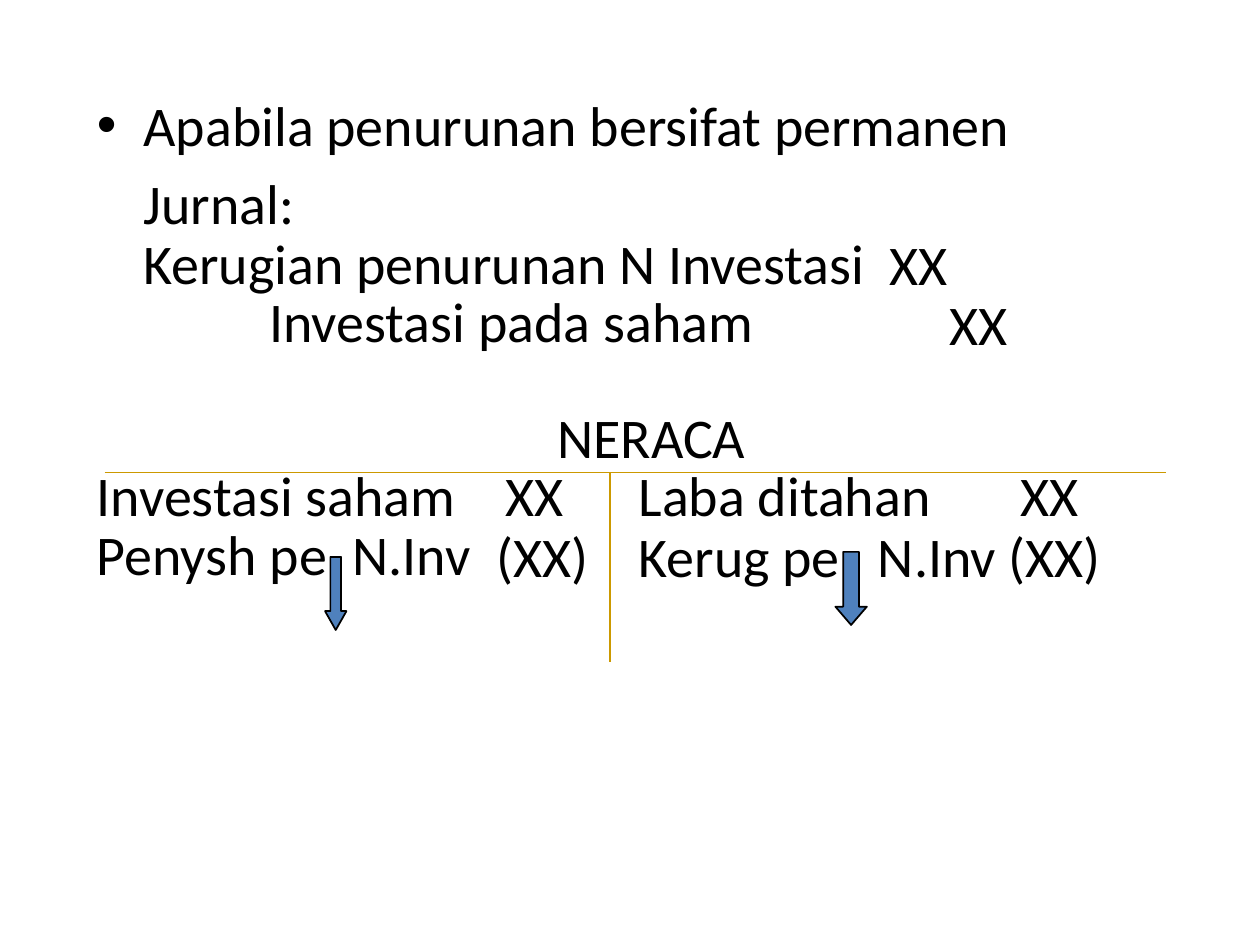
from dataclasses import dataclass

import pptx
import pptx.dml.color
import pptx.enum.shapes
import pptx.enum.text
import pptx.oxml.ns
import pptx.util
from lxml import etree

Inches = pptx.util.Inches
Pt = pptx.util.Pt
RGBColor = pptx.dml.color.RGBColor


@dataclass(frozen=True)
class Theme:
    font: str = "Calibri"
    text_size: float = 32
    paragraph_gap: float = 6.4
    line_width: float = 1
    text: RGBColor = RGBColor(0, 0, 0)
    arrow: RGBColor = RGBColor(0x4F, 0x81, 0xBD)
    rule: RGBColor = RGBColor(0xCC, 0x99, 0x00)


@dataclass(frozen=True)
class Line:
    text: str
    margin: float = 0
    bullet: bool = False
    centered: bool = False
    spacing: float = 0.7
    gap: float = Theme.paragraph_gap


@dataclass(frozen=True)
class TextBlock:
    left: float
    top: float
    width: float
    height: float
    lines: tuple[Line, ...]


@dataclass(frozen=True)
class Arrow:
    left: float
    top: float
    width: float
    head: float
    height: float = 0.58


@dataclass(frozen=True)
class Rule:
    start: tuple[float, float]
    end: tuple[float, float]


THEME = Theme()
INDENT = 0.37
JOURNAL_TOP = 1.77
BALANCE_TOP = 3.61
SECOND_ROW_TOP = 4.07

TEXT_BLOCKS = [
    # Heading, journal entry and first balance sheet column
    TextBlock(0.67, 0.67, 9, 5.83, (
        Line("Apabila penurunan bersifat permanen", INDENT, bullet=True, spacing=1),
        Line("Jurnal:", INDENT, spacing=1, gap=6),
        Line("Kerugian penurunan N Investasi", INDENT),
        Line("Investasi pada saham", INDENT + 1),
        Line("NERACA", centered=True, gap=39.4),
        Line("Investasi saham"),
        Line("Penysh pe"),
    )),
    # Journal amounts
    TextBlock(6.96, JOURNAL_TOP, 1.6, 1.1, (Line("XX", spacing=1), Line("XX", 0.48))),
    # Remaining balance sheet columns
    TextBlock(2.7, SECOND_ROW_TOP, 1.2, 0.65, (Line("N.Inv", spacing=1),)),
    TextBlock(3.84, BALANCE_TOP, 1.1, 1.1, (Line("XX", 0.07, spacing=1), Line("(XX)"))),
    TextBlock(4.97, BALANCE_TOP, 2.6, 1.1, (Line("Laba ditahan", spacing=1), Line("Kerug pe"))),
    TextBlock(6.87, BALANCE_TOP, 2.6, 1.1, (Line("XX", 1.13, spacing=1), Line("N.Inv (XX)"))),
]
ARROWS = [Arrow(2.58, 4.42, 0.17, 0.88), Arrow(6.63, 4.38, 0.25, 0.58)]
RULES = [Rule((0.83, 3.75), (9.25, 3.75)), Rule((4.84, 3.75), (4.84, 5.25))]


def add_element(parent, tag: str, **attributes: str) -> None:
    element = etree.SubElement(parent, pptx.oxml.ns.qn(tag))
    for name, value in attributes.items():
        element.set(name, value)


def write_line(paragraph, line: Line) -> None:
    paragraph.text = line.text
    paragraph.line_spacing = line.spacing
    paragraph.space_before = Pt(line.gap)
    if line.centered:
        paragraph.alignment = pptx.enum.text.PP_ALIGN.CENTER
    for run in paragraph.runs:
        run.font.name = THEME.font
        run.font.size = Pt(THEME.text_size)
        run.font.color.rgb = THEME.text

    # Indents and bullet
    properties = paragraph._p.get_or_add_pPr()
    properties.set("marL", str(Inches(line.margin)))
    properties.set("indent", str(Inches(-INDENT if line.bullet else 0)))
    if line.bullet:
        add_element(properties, "a:buFont", typeface="Arial")
        add_element(properties, "a:buChar", char="•")
    else:
        add_element(properties, "a:buNone")


def add_text_block(slide, block: TextBlock) -> None:
    text_box = slide.shapes.add_textbox(
        Inches(block.left), Inches(block.top), Inches(block.width), Inches(block.height)
    )
    text_frame = text_box.text_frame
    text_frame.word_wrap = True
    for index, line in enumerate(block.lines):
        paragraph = text_frame.add_paragraph() if index else text_frame.paragraphs[0]
        write_line(paragraph, line)


def add_arrow(slide, arrow: Arrow) -> None:
    shape = slide.shapes.add_shape(
        pptx.enum.shapes.MSO_SHAPE.DOWN_ARROW,
        Inches(arrow.left), Inches(arrow.top), Inches(arrow.width), Inches(arrow.height),
    )
    shape.adjustments[0] = 0.5
    shape.adjustments[1] = arrow.head
    shape.shadow.inherit = False
    shape.fill.solid()
    shape.fill.fore_color.rgb = THEME.arrow
    shape.line.color.rgb = THEME.text
    shape.line.width = Pt(THEME.line_width)


def add_rule(slide, rule: Rule) -> None:
    connector = slide.shapes.add_connector(
        pptx.enum.shapes.MSO_CONNECTOR.STRAIGHT,
        *(Inches(value) for value in rule.start + rule.end),
    )
    connector.line.color.rgb = THEME.rule
    connector.line.width = Pt(THEME.line_width)
    add_element(connector._element.spPr, "a:effectLst")


def main() -> None:
    presentation = pptx.Presentation()
    presentation.slide_width = Inches(10)
    presentation.slide_height = Inches(7.5)
    slide = presentation.slides.add_slide(presentation.slide_layouts[6])

    for block in TEXT_BLOCKS:
        add_text_block(slide, block)
    for arrow in ARROWS:
        add_arrow(slide, arrow)
    # T-account frame
    for rule in RULES:
        add_rule(slide, rule)

    presentation.save("out.pptx")


if __name__ == "__main__":
    main()
